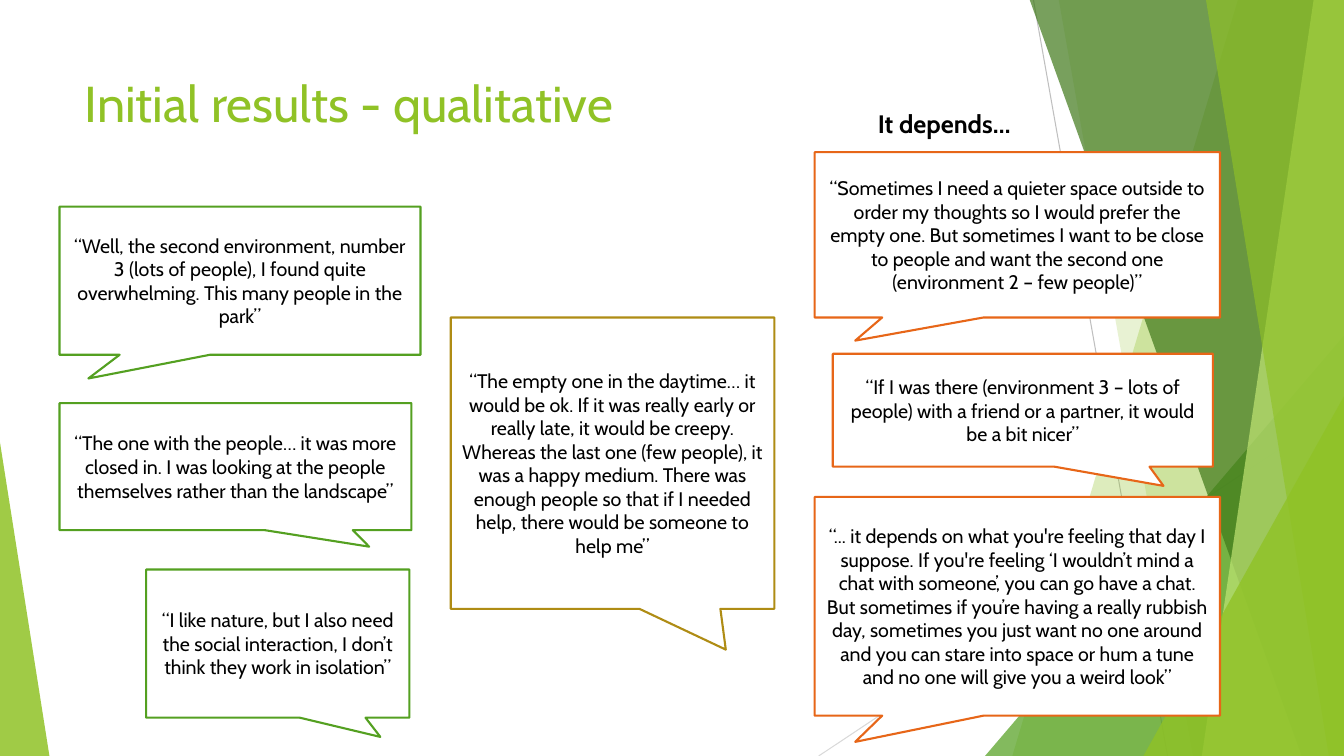
from pptx import Presentation
from pptx.dml.color import RGBColor
from pptx.enum.shapes import MSO_CONNECTOR, MSO_SHAPE
from pptx.enum.text import MSO_ANCHOR, PP_ALIGN
from pptx.oxml.ns import qn
from pptx.util import Inches, Pt
from lxml.etree import SubElement

FONT = "Cabin"
LIME, GREEN, GOLD, ORANGE = "90C226", "54A021", "AF8C14", "E76618"
TOP, WIDE, HIGH = -0.01, 13.33, 7.5

RAYS = [
    ((10.25, 0), (11.58, HIGH), "BFBFBF"),
    ((WIDE, 4.03), (8.12, HIGH), "D9D9D9"),
]

# Bands run to the right edge: top x, bottom x, colour, opacity.
BACK = [(12.28, 10.04, LIME, 30), (10.5, 11.83, LIME, 20)]
FRONT = [
    (10.21, 12.91, "3F7819", 70),
    (13.03, 11.92, "C0E474", 70),
    (11.96, 13.18, LIME, 65),
]

# Quotes: box, tail, colour, words.
QUOTES = [
    ((8.08, 4.93, 4.02, 2.17), (-0.4, 0.62), ORANGE,
     "“... it depends on what you're feeling that day I suppose. If you're "
     "feeling ‘I wouldn’t mind a chat with someone’, you can go have a chat. "
     "But sometimes if you’re having a really rubbish day, sometimes you just "
     "want no one around and you can stare into space or hum a tune and no "
     "one will give you a weird look”"),
    ((0.59, 4, 3.49, 1.26), (0.38, 0.63), GREEN,
     "“The one with the people… it was more closed in. I was looking at the "
     "people themselves rather than the landscape”"),
    ((8.08, 1.51, 4.02, 1.64), (-0.4, 0.64), ORANGE,
     "“Sometimes I need a quieter space outside to order my thoughts so I "
     "would prefer the empty one. But sometimes I want to be close to people "
     "and want the second one (environment 2 – few people)”"),
    ((8.26, 3.51, 3.77, 1.12), (0.37, 0.67), ORANGE,
     "“If I was there (environment 3 – lots of people) with a friend or a "
     "partner, it would be a bit nicer”"),
    ((4.47, 3.15, 3.21, 2.89), (0.35, 0.64), GOLD,
     "“The empty one in the daytime… it would be ok. If it was really early "
     "or really late, it would be creepy. Whereas the last one (few people), "
     "it was a happy medium. There was enough people so that if I needed "
     "help, there would be someone to help me”"),
    ((0.59, 2.05, 3.58, 1.47), (-0.42, 0.66), GREEN,
     "“Well, the second environment, number 3 (lots of people), I found quite "
     "overwhelming. This many people in the park”"),
    ((1.45, 5.65, 2.61, 1.47), (0.39, 0.63), GREEN,
     "“I like nature, but I also need the social interaction, I don’t think "
     "they work in isolation”"),
]


def tint(code):
    """Turn a hex string into a colour."""
    return RGBColor.from_string(code)


def span(box):
    """Turn a row of inches into lengths."""
    return [Inches(value) for value in box]


def write(frame, words, size, code="000000", align=PP_ALIGN.LEFT,
          anchor=MSO_ANCHOR.TOP, bold=False):
    """Fill a text frame with one styled paragraph."""
    frame.word_wrap = True
    frame.vertical_anchor = anchor
    para = frame.paragraphs[0]
    para.alignment = align
    run = para.add_run()
    run.text = words
    style = {"name": FONT, "size": Pt(size), "bold": bold}
    for key, value in style.items():
        setattr(run.font, key, value)
    run.font.color.rgb = tint(code)


def paint(shape, code, clear=100):
    """Give a shape a flat fill of some opacity and no shadow or line."""
    shape.shadow.inherit = False
    shape.fill.solid()
    shape.fill.fore_color.rgb = tint(code)
    shape.line.fill.background()
    if clear < 100:
        tag = shape._element.spPr.find(".//" + qn("a:srgbClr"))
        SubElement(tag, qn("a:alpha")).set("val", str(clear * 1000))


def ray(slide, start, end, code):
    """Draw a thin line across the backdrop."""
    line = slide.shapes.add_connector(
        MSO_CONNECTOR.STRAIGHT, *span(start + end))
    line.line.color.rgb = tint(code)
    line.line.width = Pt(0.75)
    SubElement(line._element.spPr, qn("a:effectLst"))


def band(slide, high, low, code, clear):
    """Draw a slanted band that reaches the right edge."""
    pen = slide.shapes.build_freeform(Inches(high), Inches(TOP))
    spots = [(WIDE, TOP), (WIDE, HIGH), (low, HIGH)]
    pen.add_line_segments([span(spot) for spot in spots], close=True)
    paint(pen.convert_to_shape(), code, clear)


def peak(slide, box, tip, code, clear):
    """Draw a see-through triangle with its tip at one side."""
    shape = slide.shapes.add_shape(MSO_SHAPE.ISOSCELES_TRIANGLE, *span(box))
    shape.adjustments[0] = tip
    paint(shape, code, clear)


def quote(slide, box, tail, code, words):
    """Draw a speech callout with centred words."""
    shape = slide.shapes.add_shape(
        MSO_SHAPE.RECTANGULAR_CALLOUT, *span(box))
    for index, value in enumerate(tail):
        shape.adjustments[index] = value
    paint(shape, "FFFFFF")
    shape.line.color.rgb = tint(code)
    shape.line.width = Pt(1.5)
    write(shape.text_frame, words, 14, align=PP_ALIGN.CENTER,
          anchor=MSO_ANCHOR.MIDDLE)


def scene(slide):
    """Draw the green backdrop from back to front."""
    for row in RAYS:
        ray(slide, *row)
    for row in BACK:
        band(slide, *row)
    peak(slide, (9.77, 3.33, 3.56, 4.17), 1, GREEN, 72)
    for row in FRONT:
        band(slide, *row)
    peak(slide, (11.34, 3.93, 1.99, 3.57), 1, LIME, 80)
    peak(slide, (0, 4.39, 0.49, 3.11), 0, LIME, 85)


def head(slide):
    """Place and style the title."""
    title = slide.shapes.title
    place = zip(("left", "top", "width", "height"),
                span((0.74, 0.67, 9.4, 1.44)))
    for key, value in place:
        setattr(title, key, value)
    write(title.text_frame, "Initial results - qualitative", 36, LIME)


def main():
    """Build the slide and save it."""
    deck = Presentation()
    deck.slide_width, deck.slide_height = span((WIDE, HIGH))
    slide = deck.slides.add_slide(deck.slide_layouts[5])
    scene(slide)
    head(slide)
    for row in QUOTES:
        quote(slide, *row)
    label = slide.shapes.add_textbox(*span((8.61, 1.03, 3.07, 0.4)))
    write(label.text_frame, "It depends…", 18, bold=True)
    deck.save("out.pptx")


if __name__ == "__main__":
    main()
